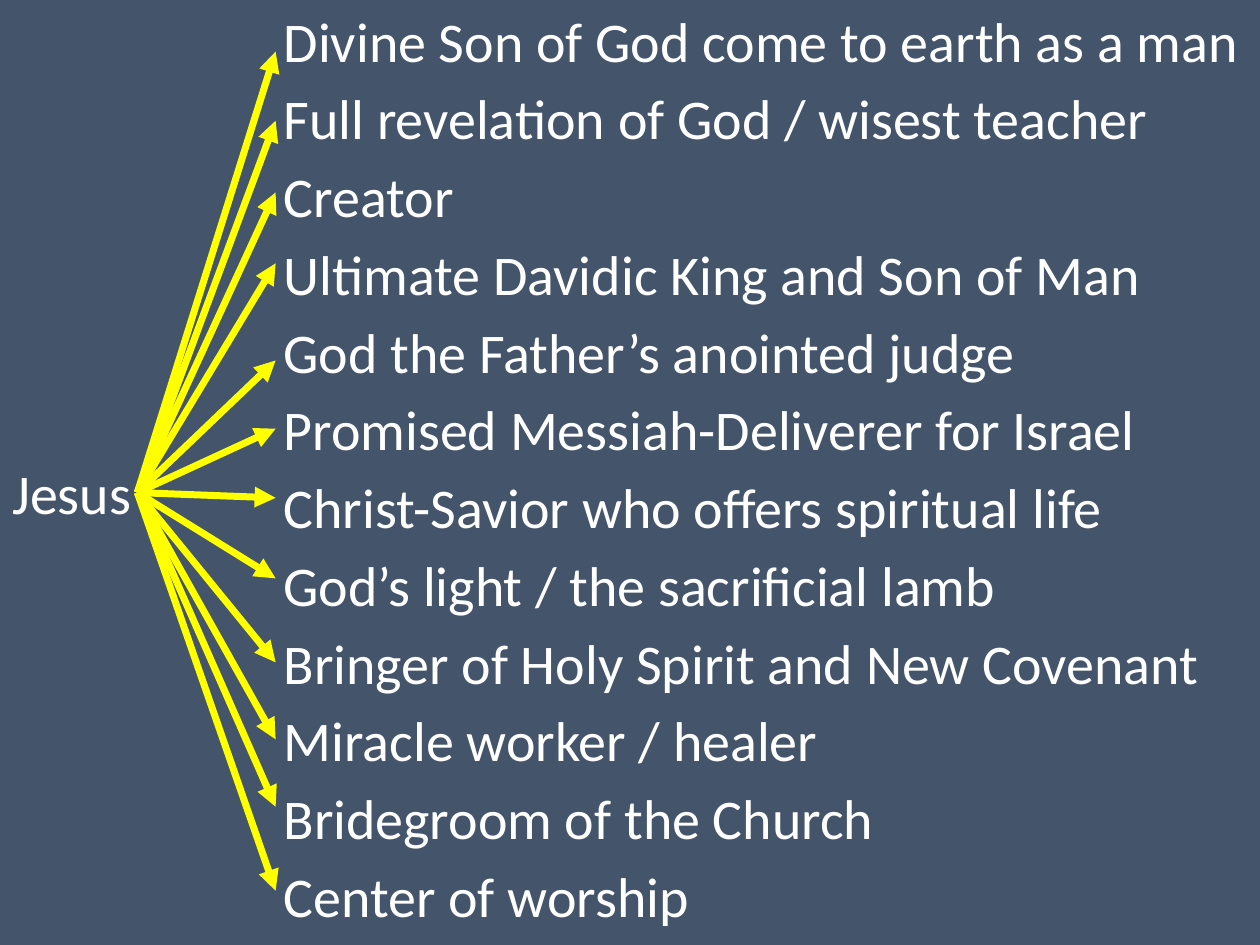
from lxml import etree
from pptx import Presentation
from pptx.dml.color import RGBColor
from pptx.enum.shapes import MSO_CONNECTOR
from pptx.enum.text import MSO_AUTO_SIZE
from pptx.oxml.ns import qn
from pptx.util import Pt

STRAIGHT = MSO_CONNECTOR.STRAIGHT
GROW = MSO_AUTO_SIZE.SHAPE_TO_FIT_TEXT
COLOURS = {"background": "44546A", "text": "FFFFFF", "arrow": "FFFF00"}
ROLES = [
    ("Divine Son of God come to earth as a man", 29.5),
    ("Full revelation of God / wisest teacher", 69),
    ("Creator", 110),
    ("Ultimate Davidic King and Son of Man", 150.5),
    ("God the Father’s anointed judge", 206),
    ("Promised Messiah-Deliverer for Israel", 245),
    ("Christ-Savior who offers spiritual life", 284.5),
    ("God’s light / the sacrificial lamb", 330.5),
    ("Bringer of Holy Spirit and New Covenant", 378.5),
    ("Miracle worker / healer", 422.5),
    ("Bridegroom of the Church", 461),
    ("Center of worship", 509),
]


def colour(name):
    """Return the named colour."""
    return RGBColor.from_string(COLOURS[name])


def add_text(page, box, lines):
    """Place lines of text in a box, one paragraph each."""
    frame = page.shapes.add_textbox(*map(Pt, box)).text_frame
    frame.word_wrap = True
    frame.auto_size = GROW
    frame.text = "\n".join(lines)
    for index, para in enumerate(frame.paragraphs):
        if index:
            para.space_before = Pt(6)
        for span in para.runs:
            span.font.name = "Calibri"
            span.font.size = Pt(32)
            span.font.color.rgb = colour("text")


def add_arrow(page, start, end):
    """Draw a thick arrow from start to end."""
    arrow = page.shapes.add_connector(STRAIGHT, *map(Pt, start + end))
    arrow.line.color.rgb = colour("arrow")
    arrow.line.width = Pt(4)
    properties = arrow.element.spPr
    etree.SubElement(properties.find(qn("a:ln")), qn("a:tailEnd"), type="triangle")
    etree.SubElement(properties, qn("a:effectLst"))


def add_role_fan(page, box):
    """Place the subject, its roles and the arrows between them in a box."""
    left, top, width, height = box
    roles_left = left + 155
    add_text(page, (left, top + 258.5, 88.5, 46), ["Jesus"])
    add_text(page, (roles_left, top, left + width - roles_left, height),
             [role for role, _ in ROLES])
    for _, tip in ROLES:
        add_arrow(page, (left + 78.5, top + 281.5), (left + 157.5, top + tip))


def main():
    """Build and save the slide."""
    deck = Presentation()
    deck.slide_width, deck.slide_height = Pt(720), Pt(540)
    page = deck.slides.add_slide(deck.slide_layouts[6])
    page.background.fill.solid()
    page.background.fill.fore_color.rgb = colour("background")
    add_role_fan(page, (0, 0, 720, 539.5))
    deck.save("out.pptx")


if __name__ == "__main__":
    main()
